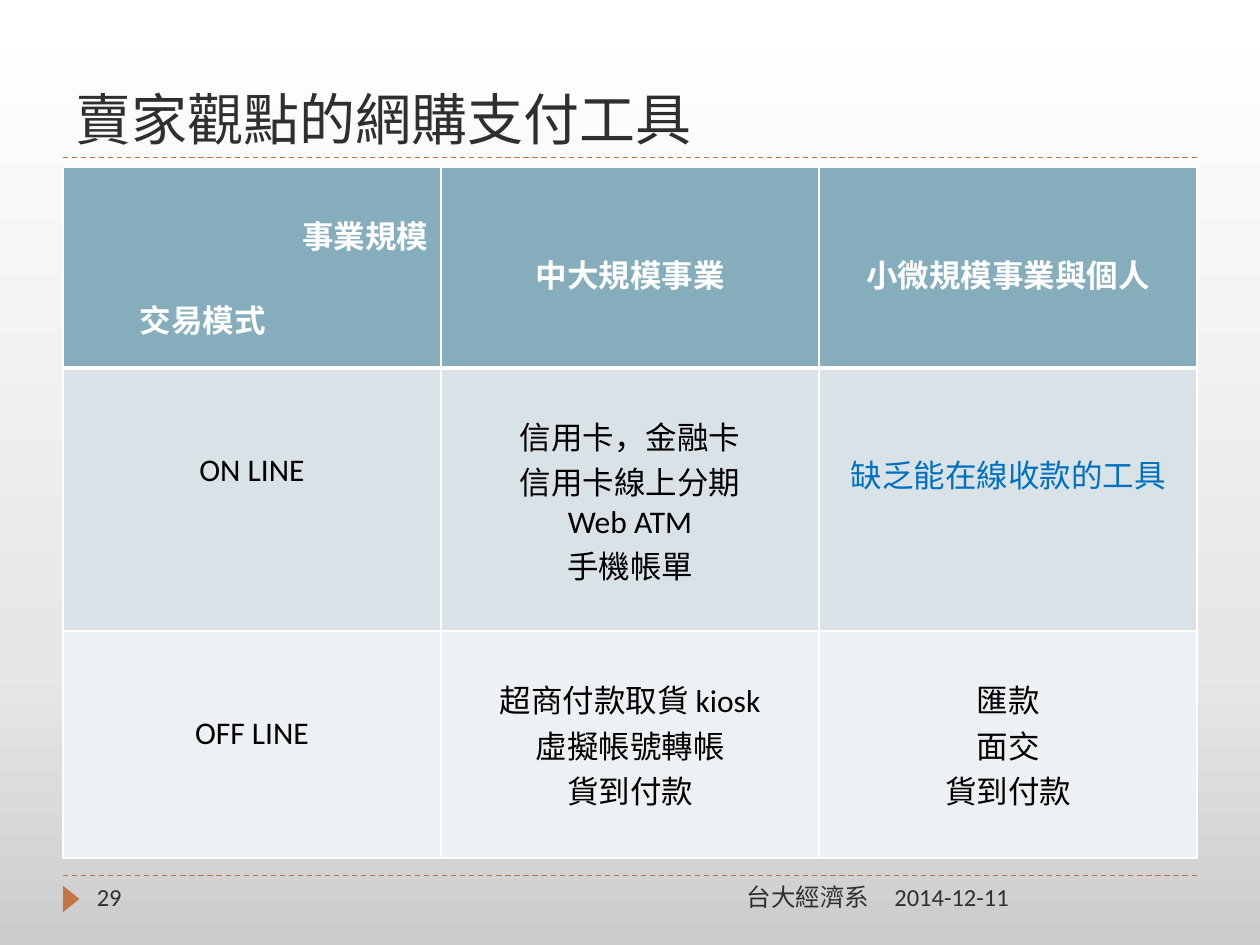
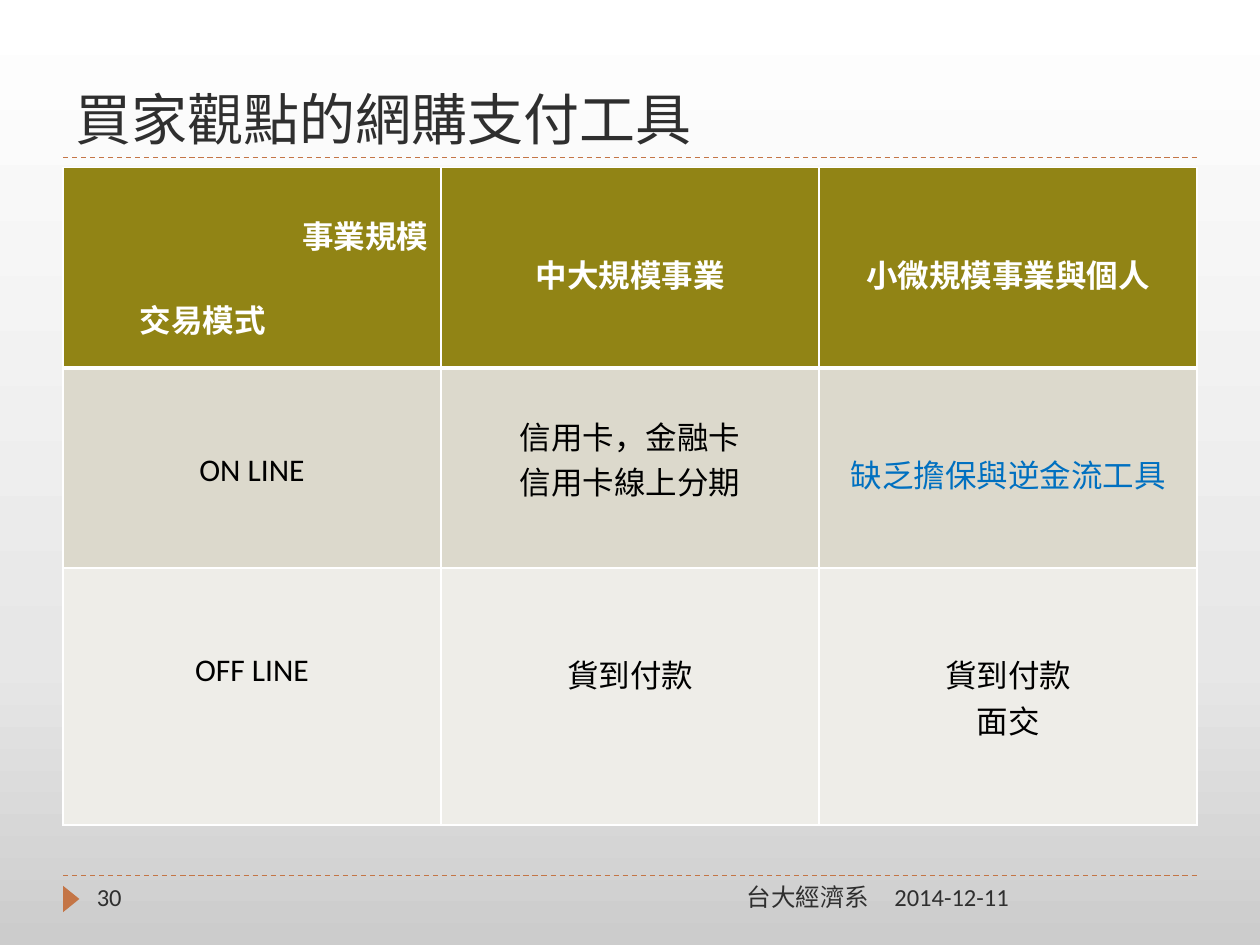
from copy import deepcopy

from pptx import Presentation
from pptx import util as u
from pptx.dml.color import RGBColor
from pptx.enum import dml, shapes, text
from pptx.oxml import parse_xml
from pptx.oxml.ns import nsdecls, qn

INK, ACCENT, WHITE, BLACK, GAP_BLUE = "2F2F2F", "C47546", "FFFFFF", "000000", "0070C0"
BACKDROP = [(0, "CCCCCC"), (0.3, "E7E7E7"), (1, "FFFFFF")]
TITLE_FONT, BODY_FONT = "Roboto Slab", "Calibri"
LEFT, RIGHT = 0.5, 9.5
TITLE_RULE, FOOTER_TOP = 1.25, 6.95
TABLE_TOP, COLUMN_WIDTH = 1.33, 3
LINE_STEP = 0.305  # height of one 18 pt line, in inches
CENTER, RIGHT_ALIGN = text.PP_ALIGN.CENTER, text.PP_ALIGN.RIGHT


def rgb(hex_color):
    return RGBColor.from_string(hex_color)


class Deck:
    def __init__(self):
        self.prs = Presentation()
        self.prs.slide_width, self.prs.slide_height = u.Inches(10), u.Inches(7.5)
        self.slide = None

    def new_slide(self, title, number):
        self.slide = self.prs.slides.add_slide(self.prs.slide_layouts[6])
        self.backdrop()
        for y in (FOOTER_TOP, TITLE_RULE):
            self.dashed_rule(y)
        self.page_marker()
        self.label(title, LEFT, 0.17, 9, 1.08, size=32, font=TITLE_FONT,
                   anchor=text.MSO_ANCHOR.BOTTOM)
        self.label("2014-12-11", 7, FOOTER_TOP, 2.5, 0.4)
        self.label(str(number), 0.67, FOOTER_TOP, 2.17, 0.4)
        self.label("台大經濟系", 3.17, FOOTER_TOP, 3.83, 0.4, align=RIGHT_ALIGN)

    def backdrop(self):
        fill = self.slide.background.fill
        fill.gradient()
        fill.gradient_angle = 90
        stops = self.slide.element.find(".//" + qn("a:gsLst"))
        stops.append(deepcopy(stops[-1]))
        for stop, (position, color) in zip(fill.gradient_stops, BACKDROP):
            stop.position = position
            stop.color.rgb = rgb(color)

    def dashed_rule(self, y):
        rule = self.slide.shapes.add_connector(
            shapes.MSO_CONNECTOR.STRAIGHT,
            u.Inches(LEFT), u.Inches(y), u.Inches(RIGHT), u.Inches(y))
        rule.line.color.rgb = rgb(ACCENT)
        rule.line.width = u.Pt(0.75)
        rule.line.dash_style = dml.MSO_LINE.DASH
        rule.element.spPr.append(parse_xml(f"<a:effectLst {nsdecls('a')}/>"))

    def page_marker(self):
        marker = self.slide.shapes.add_shape(
            shapes.MSO_SHAPE.ISOSCELES_TRIANGLE,
            u.Inches(0.46), u.Inches(7.07), u.Inches(0.21), u.Inches(0.13))
        marker.rotation = 90
        marker.shadow.inherit = False
        marker.fill.solid()
        marker.fill.fore_color.rgb = rgb(ACCENT)
        marker.line.fill.background()

    def label(self, words, left, top, width, height, size=14, font=BODY_FONT,
              align=None, anchor=text.MSO_ANCHOR.TOP):
        box = self.slide.shapes.add_textbox(*map(u.Inches, (left, top, width, height)))
        frame = box.text_frame
        frame.word_wrap = True
        frame.vertical_anchor = anchor
        frame.paragraphs[0].alignment = align
        self.run(frame.paragraphs[0], words, size, font, INK)

    def run(self, paragraph, words, size, font, color, bold=False):
        run = paragraph.add_run()
        run.text = words
        run.font.size, run.font.name, run.font.bold = u.Pt(size), font, bold
        run.font.color.rgb = rgb(color)

    def payment_table(self, row_heights, fills, body):
        """Draw the header and body rows; each body cell is (lead lines, colour, lines)."""
        header = [(1, WHITE, ["事業規模", "交易模式"]),
                  (2, WHITE, ["中大規模事業"]),
                  (2, WHITE, ["小微規模事業與個人"])]
        rows = [header, *body]
        table = self.slide.shapes.add_table(
            len(rows), len(header), u.Inches(LEFT), u.Inches(TABLE_TOP),
            u.Inches(RIGHT - LEFT), u.Inches(sum(row_heights))).table
        table.first_row = table.horz_banding = False
        for column in table.columns:
            column.width = u.Inches(COLUMN_WIDTH)
        for r, (height, fill, cells) in enumerate(zip(row_heights, fills, rows)):
            table.rows[r].height = u.Inches(height)
            for c, (lead, color, lines) in enumerate(cells):
                cell = table.cell(r, c)
                cell.fill.solid()
                cell.fill.fore_color.rgb = rgb(fill)
                self.borders(cell, top=3 if r == 1 else 1, bottom=3 if r == 0 else 1)
                self.cell_lines(cell, lead, color, lines, bold=r == 0)
        self.split_corner(table.cell(0, 0))

    def cell_lines(self, cell, lead, color, lines, bold):
        cell.margin_top = u.Inches(0.05 + lead * LINE_STEP)
        frame = cell.text_frame
        for i, line in enumerate(lines):
            paragraph = frame.add_paragraph() if i else frame.paragraphs[0]
            paragraph.alignment = CENTER
            self.run(paragraph, line, 18, BODY_FONT, color, bold)

    def split_corner(self, cell):
        """Set the column heading to the right and the row heading lower left."""
        scale, mode = cell.text_frame.paragraphs
        scale.alignment = RIGHT_ALIGN
        mode.alignment = text.PP_ALIGN.LEFT
        mode.space_before = u.Inches(LINE_STEP)
        mode._p.get_or_add_pPr().set("marL", str(u.Inches(0.51)))

    def borders(self, cell, top, bottom):
        properties = cell._tc.get_or_add_tcPr()
        for i, (side, points) in enumerate(zip("LRTB", (1, 1, top, bottom))):
            properties.insert(i, parse_xml(
                f'<a:ln{side} {nsdecls("a")} w="{u.Pt(points)}"><a:solidFill>'
                f'<a:srgbClr val="{WHITE}"/></a:solidFill></a:ln{side}>'))


def main():
    deck = Deck()
    online = (2, BLACK, ["ON LINE"])
    offline = (2, BLACK, ["OFF LINE"])
    cards = ["信用卡，金融卡", "信用卡線上分期"]

    deck.new_slide("賣家觀點的網購支付工具", 29)
    deck.payment_table([1.59, 2.09, 1.8], ["85ADBC", "D9E3E7", "EDF1F3"], [
        [online, (1, BLACK, [*cards, "Web ATM", "手機帳單"]),
         (2, GAP_BLUE, ["缺乏能在線收款的工具"])],
        [offline, (1, BLACK, ["超商付款取貨 kiosk", "虛擬帳號轉帳", "貨到付款"]),
         (1, BLACK, ["匯款", "面交", "貨到付款"])],
    ])

    deck.new_slide("買家觀點的網購支付工具", 30)
    deck.payment_table([1.59, 1.59, 2.04], ["918415", "DCD9CC", "EEEDE8"], [
        [online, (1, BLACK, cards), (2, GAP_BLUE, ["缺乏擔保與逆金流工具"])],
        [offline, (2, BLACK, ["貨到付款"]), (2, BLACK, ["貨到付款", "面交"])],
    ])
    deck.prs.save("out.pptx")


if __name__ == "__main__":
    main()
